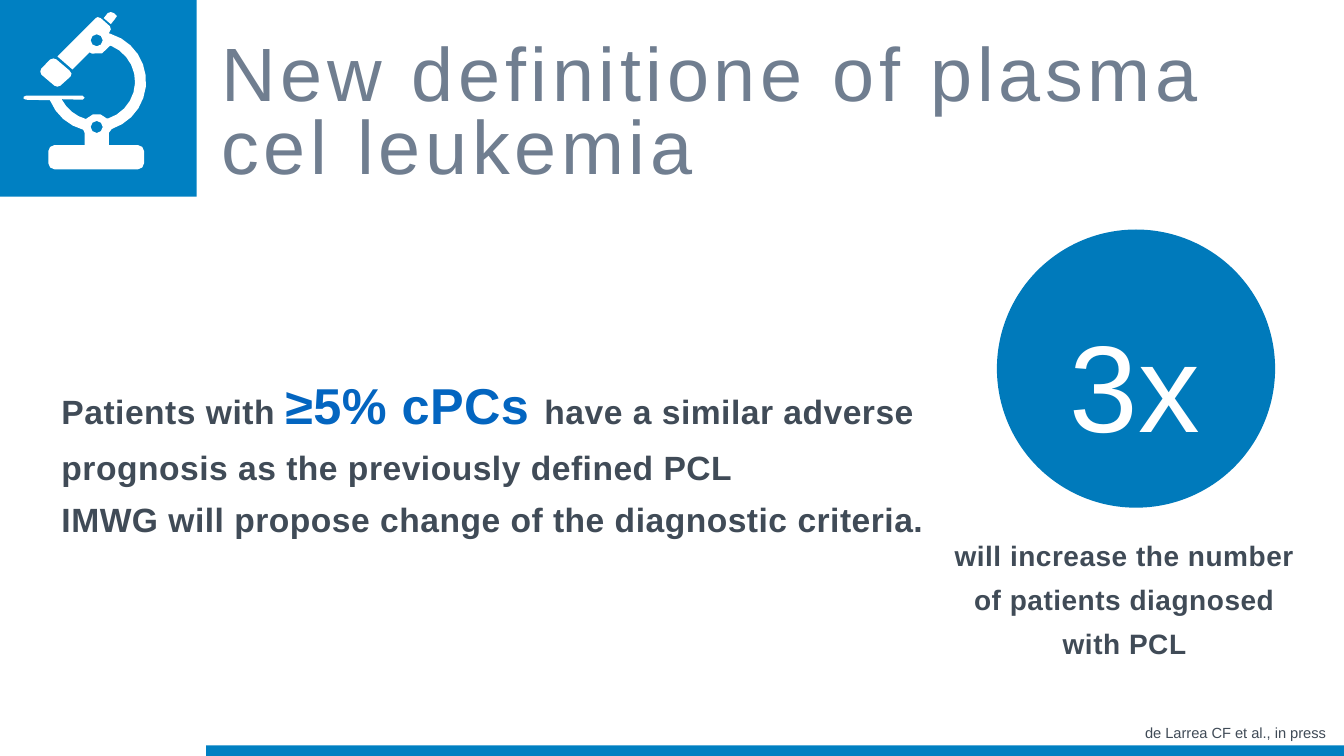
import math
import pptx
import pptx.util
import pptx.dml.color
import pptx.enum.shapes
import pptx.enum.text

CELL = pptx.util.Inches(0.1)  # grid of 133.3 columns by 75 rows
COLS, ROWS = 133.33, 75
INK = {"blue": "0080C2", "disc": "007ABB", "accent": "0365C0",
       "title": "707E90", "text": "404B57", "white": "FFFFFF"}
KIND = pptx.enum.shapes.MSO_SHAPE
ALIGN = pptx.enum.text.PP_ALIGN
ANCHOR = pptx.enum.text.MSO_ANCHOR


def arc(x, y, r, start, end):
    """Points on a circle, in grid cells, between two angles in degrees."""
    step = 14 if r > 3 else 45
    steps = math.ceil(abs(end - start) / step)
    turns = [math.radians(start + (end - start) * i / steps)
             for i in range(steps + 1)]
    return [(x + r * math.cos(t), y + r * math.sin(t)) for t in turns]


def color(name):
    return pptx.dml.color.RGBColor.from_string(INK[name])


deck = pptx.Presentation()
deck.slide_width = int(COLS * CELL)
deck.slide_height = ROWS * CELL
slide = deck.slides.add_slide(deck.slide_layouts[6])
shapes = slide.shapes

# Blue corner, footer bar and disc
solids = []
for kind, spot, ink in [
    (KIND.RECTANGLE, (0, 0, 19.5, 19.5), "blue"),
    (KIND.RECTANGLE, (20.46, ROWS - 1.04, COLS - 20.46, 1.04), "blue"),
    (KIND.OVAL, (98.9, 22.77, 27.6, 27.6), "disc"),
]:
    solids.append((shapes.add_shape(kind, *[int(v * CELL) for v in spot]), ink))

# Microscope: body, eyepiece, lens and two round holes
ring = (9.55, 8.1)
body = [(9.7, 1.7), (9.5, 1.8), (5.7, 5.6), (7.2, 6.9), (8.9, 5.2)]
body += arc(9.6, 4, 1.4, 110, 25)
body += arc(*ring, 3.85, -68, 72)
body += arc(9.6, 12.6, 1.3, -40, -140)
body += arc(*ring, 3.85, 105, 153)
body += [(8.2, 9.9), (8.4, 9.7), (8.2, 9.5), (2.6, 9.5), (2.35, 9.6),
         (2.35, 9.8), (2.6, 9.9)]
body += arc(*ring, 4.95, 158, 105)
body += [(8.4, 13.2), (8.4, 14.4)]
for x, y, turn in [(5.4, 15, 270), (5.4, 16.2, 180), (13.7, 16.2, 90), (13.7, 15, 0)]:
    body += arc(x, y, 0.6, turn, turn - 90)
body += [(10.8, 14.4), (10.8, 13.2)]
body += arc(*ring, 4.95, 72, -73)
body += [(10.8, 3.3), (11, 2.9), (10.9, 2.6), (10, 1.8)]
eye = [(11, 1.2), (10.7, 1.3), (10.3, 1.8), (11, 2.4), (11.4, 1.9),
       (11.6, 1.6), (11.4, 1.4), (11.3, 1.3)]
lens = [(5.3, 5.8), (5, 5.9), (4.1, 6.8), (4, 7.1), (4.1, 7.4), (5.4, 8.5),
        (5.7, 8.6), (6, 8.5), (7, 7.6), (7.1, 7.3), (6.9, 7), (5.6, 5.9)]
holes = [arc(9.6, y, 0.6, 0, 315) for y in (4, 12.6)]

FINE = 100  # drawing units in one grid cell
pen = None
for line in [body, eye, lens, *holes]:
    pts = [(x * FINE, y * FINE) for x, y in line]
    if pen is None:
        pen = shapes.build_freeform(*pts[0], scale=CELL / FINE)
    else:
        pen.move_to(*pts[0])
    pen.add_line_segments(pts[1:], close=True)
solids.append((pen.convert_to_shape(), "white"))

for shape, ink in solids:
    shape.shadow.inherit = False
    shape.fill.solid()
    shape.fill.fore_color.rgb = color(ink)
    shape.line.fill.background()

# Texts: place, inset, anchor, wrap, align, spacing, tracking, bold, paragraphs
# A paragraph is a list of (text, size, ink) runs
texts = [
    ((21.95, 3.15, 105.1, 15.6), (0, 0), ANCHOR.BOTTOM, True, ALIGN.LEFT, 0.8, 3.35, False,
     [[("New definitione of plasma cel leukemia", 54, "title")]]),
    ((93.05, 71.3, 39.5, 2.8), (1, 0.5), ANCHOR.TOP, True, ALIGN.RIGHT, 1, 0, False,
     [[("de Larrea CF et al., in press", 10.5, "text")]]),
    ((5.55, 34.65, 88.7, 19.5), (0.55, 0.55), ANCHOR.MIDDLE, True, ALIGN.LEFT, 1.3, 0.38, True,
     [[("Patients with ", 24, "text"), ("≥5% cPCs ", 36, "accent"),
       ("have a similar adverse prognosis as the previously defined PCL", 24, "text")],
      [("IMWG will propose change of the diagnostic criteria.", 24, "text")]]),
    ((105.6, 25.6, 14.3, 20.4), (0.55, 0.55), ANCHOR.MIDDLE, False, ALIGN.LEFT, 1.3, 0.38, False,
     [[("3x", 88, "white")]]),
    ((91.8, 51.85, 39.5, 14.2), (0.55, 0.55), ANCHOR.MIDDLE, True, ALIGN.CENTER, 1.3, 0.38, True,
     [[("will increase the number\vof patients diagnosed\vwith PCL", 20, "text")]]),
]
for spot, inset, anchor, wrap, align, lead, track, bold, paras in texts:
    frame = shapes.add_textbox(*[int(v * CELL) for v in spot]).text_frame
    frame.word_wrap = wrap
    frame.vertical_anchor = anchor
    frame.margin_left = frame.margin_right = int(inset[0] * CELL)
    frame.margin_top = frame.margin_bottom = int(inset[1] * CELL)
    for i, runs in enumerate(paras):
        para = frame.add_paragraph() if i else frame.paragraphs[0]
        para.alignment = align
        para.line_spacing = lead
        para.font.name = "Arial"
        para.font.bold = bold
        para.font._rPr.set("spc", str(round(track * 100)))
        if len(runs) == 1:
            para.text, size, ink = runs[0]
            fonts = [(para.font, size, ink)]
        else:
            fonts = []
            for words, size, ink in runs:
                run = para.add_run()
                run.text = words
                fonts.append((run.font, size, ink))
        for font, size, ink in fonts:
            font.size = pptx.util.Pt(size)
            font.color.rgb = color(ink)

deck.save("out.pptx")
